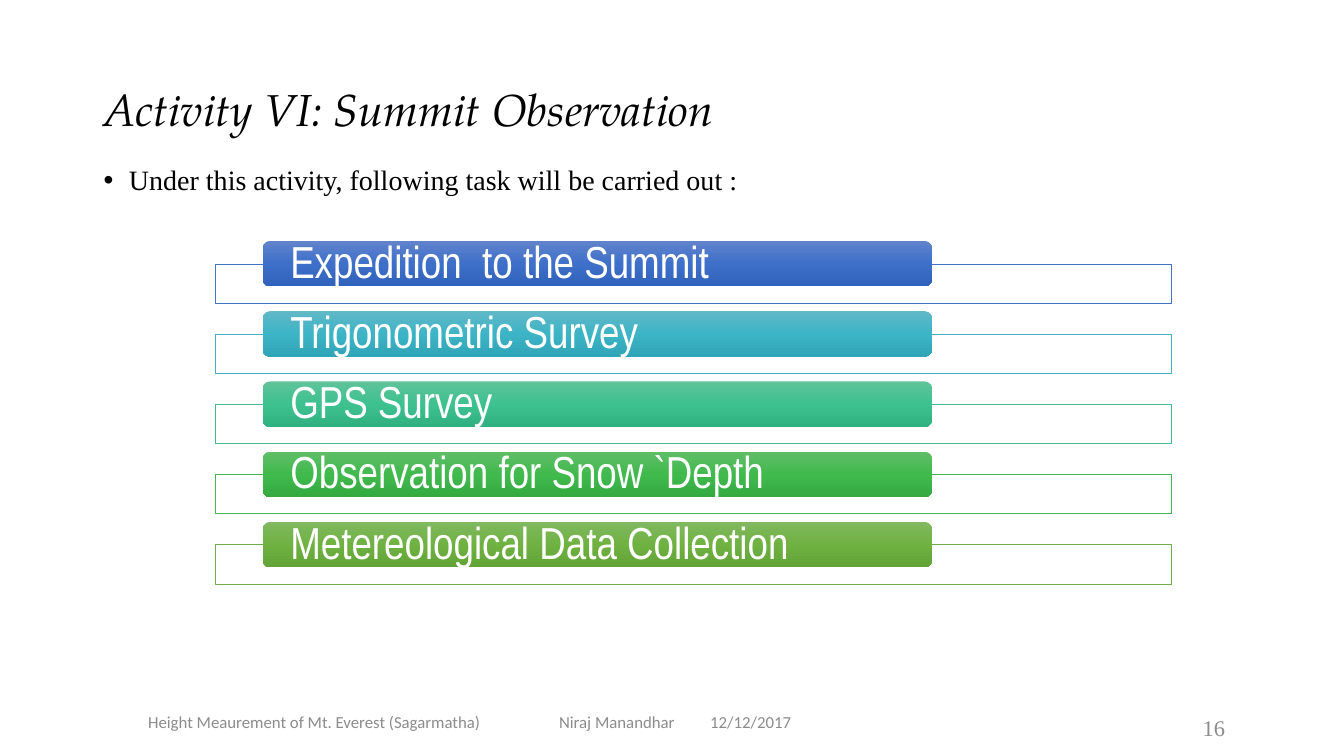
import copy

import lxml.etree
import pptx
import pptx.util
from pptx.dml.color import RGBColor
from pptx.enum.shapes import MSO_SHAPE
from pptx.enum.text import MSO_ANCHOR, PP_ALIGN
from pptx.oxml.ns import qn
from pptx.util import Cm, Pt

COLORS = {"ink": "000000", "muted": "8C8C8C", "paper": "FFFFFF"}

# task, frame line, gradient from top to bottom
TASKS = [
    ("Expedition  to the Summit", "4472C4", ("6183CB", "3E70CA", "3062BB")),
    ("Trigonometric Survey", "43AFC0", ("61B8C7", "3DB4C6", "30A5B7")),
    ("GPS Survey", "43BB8D", ("60C39A", "3DC18F", "31B080")),
    ("Observation for Snow `Depth", "45B451", ("60BE68", "40B94D", "34AA41")),
    ("Metereological Data Collection", "70AD47", ("81B861", "6FB242", "62A336")),
]

TITLE = {"name": "TeX Gyre Pagella", "size": Pt(32), "italic": True}
BODY = {"name": "Times New Roman", "size": Pt(20)}
FOOT = {"name": "Calibri", "size": Pt(12)}
PAGE = {"name": "Times New Roman", "size": Pt(16)}
LABEL = {"name": "Arial Narrow", "size": Pt(32)}


def write(shape, text, style, color, align=PP_ALIGN.LEFT, anchor=MSO_ANCHOR.MIDDLE):
    """Fill a shape with one styled paragraph and return the paragraph."""
    frame = shape.text_frame
    frame.word_wrap = True
    frame.vertical_anchor = anchor
    para = frame.paragraphs[0]
    para.alignment = align
    run = para.add_run()
    run.text = text
    for key, value in style.items():
        setattr(run.font, key, value)
    run.font.color.rgb = RGBColor.from_string(COLORS[color])
    return para


deck = pptx.Presentation()
deck.slide_width, deck.slide_height = Cm(33.87), Cm(19.05)
slide = deck.slides.add_slide(deck.slide_layouts[6])
shapes = slide.shapes

# Footer, title and page number
texts = [
    ("Height Meaurement of Mt. Everest (Sagarmatha)", (3.2, 17.68, 9.45, 1.02),
     FOOT, "muted", PP_ALIGN.CENTER),
    ("Niraj Manandhar \t12/12/2017", (12.29, 17.68, 9.45, 1.02),
     FOOT, "muted", PP_ALIGN.CENTER),
    ("Activity VI: Summit Observation", (2.36, 1.75, 29.13, 2.13),
     TITLE, "ink", PP_ALIGN.LEFT),
    ("16", (28.96, 17.83, 2.16, 1.02), PAGE, "muted", PP_ALIGN.RIGHT),
]
for text, place, style, color, align in texts:
    box = shapes.add_textbox(*map(Cm, place))
    para = write(box, text, style, color, align)
    if style is TITLE:
        para.line_spacing = 0.9

# Bulleted lead-in
box = shapes.add_textbox(Cm(2.36), Cm(4.06), Cm(29.13), Cm(13.08))
para = write(box, "Under this activity, following task will be carried out :",
             BODY, "ink", anchor=MSO_ANCHOR.TOP)
para.line_spacing = 0.9
props = para._p.get_or_add_pPr()
props.set("marL", str(Cm(0.64)))
props.set("indent", str(-Cm(0.64)))
lxml.etree.SubElement(props, qn("a:buFont")).set("typeface", "Arial")
lxml.etree.SubElement(props, qn("a:buChar")).set("char", "•")

# Task list: an outlined frame with a gradient bar over its top edge
for row, (task, edge, shades) in enumerate(TASKS):
    top = 6.07 + 1.77 * row
    frame = shapes.add_shape(MSO_SHAPE.RECTANGLE, Cm(5.42), Cm(top + 0.58), Cm(24.1), Cm(0.99))
    frame.shadow.inherit = False
    frame.fill.solid()
    frame.fill.fore_color.rgb = RGBColor.from_string(COLORS["paper"])
    tint = frame._element.spPr.find(qn("a:solidFill"))[0]
    lxml.etree.SubElement(tint, qn("a:alpha")).set("val", "90000")
    frame.line.color.rgb = RGBColor.from_string(edge)
    frame.line.width = Pt(0.5)

    bar = shapes.add_shape(MSO_SHAPE.ROUNDED_RECTANGLE, Cm(6.62), Cm(top), Cm(16.87), Cm(1.15))
    bar.shadow.inherit = False
    bar.line.fill.background()
    bar.fill.gradient()
    bar.fill.gradient_angle = 270
    stops = bar._element.spPr.find(qn("a:gradFill")).find(qn("a:gsLst"))
    stops.insert(1, copy.deepcopy(stops[0]))
    for step, (stop, shade) in enumerate(zip(bar.fill.gradient_stops, shades)):
        stop.position = step / 2
        stop.color.rgb = RGBColor.from_string(shade)

    inner = bar.text_frame
    inner.margin_left = inner.margin_right = Cm(0.64)
    inner.margin_top = inner.margin_bottom = 0
    write(bar, task, LABEL, "paper").line_spacing = 0.9

deck.save("out.pptx")
